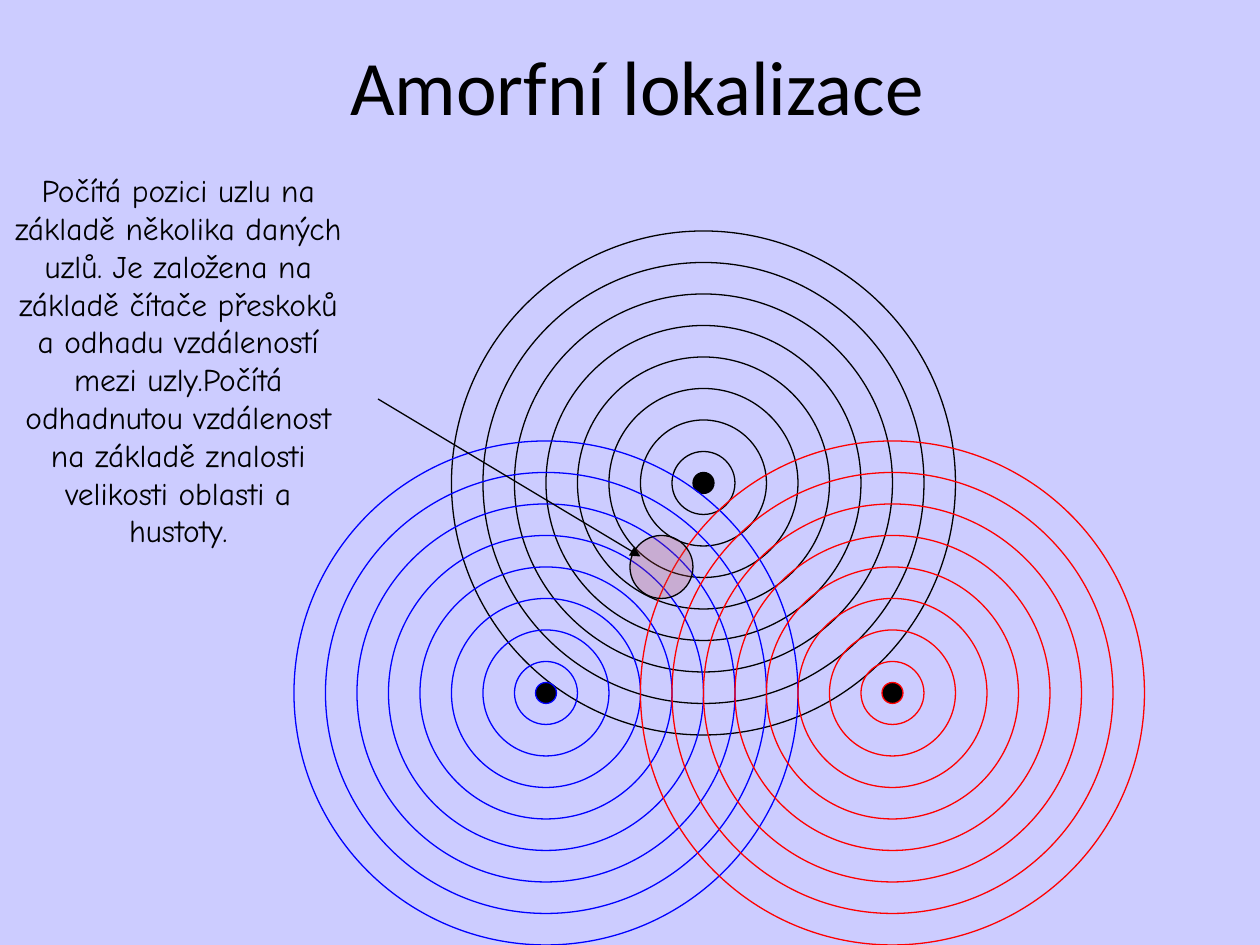
import pptx
import pptx.dml.color
import pptx.enum.shapes
import pptx.enum.text
import pptx.oxml
import pptx.oxml.ns
import pptx.util
from lxml import etree

Pt = pptx.util.Pt

# Content
TITLE = " Amorfní lokalizace"
DESCRIPTION = (
    "Počítá pozici uzlu na základě několika daných uzlů. Je založena na "
    "základě čítače přeskoků a odhadu vzdáleností mezi uzly.Počítá "
    "odhadnutou vzdálenost na základě znalosti velikosti oblasti a hustoty."
)
ANCHOR_NODES = [  # centre x, centre y, theme colour
    (402, 276, "black"),
    (312, 396, "blue"),
    (510, 396, "red"),
]
ESTIMATED_ZONE = (378, 324, 18)  # centre x, centre y, radius
POINTER = (216, 228, 366, 318)  # from x, y, to x, y
TITLE_BOX = (104.4, 22.3, 509.8, 52.6)
DESCRIPTION_BOX = (0, 94.3, 203.8, 375.8)
HOP_COUNT, HOP_RADIUS, NODE_RADIUS = 8, 18, 6

THEME = {
    "background": "CCCCFF",
    "black": "000000",
    "blue": "0000FF",
    "red": "FF0000",
    "zone": "C0504D",
    "zone_opacity": 25,
    "title_font": "Calibri",
    "title_size": 44,
    "body_font": "Comic Neue",
    "body_size": 18,
    "line_width": 0.75,
}


def color(name):
    return pptx.dml.color.RGBColor.from_string(THEME[name])


def style_line(line, name):
    line.color.rgb = color(name)
    line.width = Pt(THEME["line_width"])


def add_circle(slide, x, y, radius, line, fill=None):
    shape = slide.shapes.add_shape(
        pptx.enum.shapes.MSO_SHAPE.OVAL,
        Pt(x - radius), Pt(y - radius), Pt(2 * radius), Pt(2 * radius),
    )
    shape.shadow.inherit = False
    style_line(shape.line, line)
    if fill:
        shape.fill.solid()
        shape.fill.fore_color.rgb = color(fill)
    else:
        shape.fill.background()
    return shape


def write_text(shape, box, text, style, anchor):
    shape.left, shape.top, shape.width, shape.height = map(Pt, box)
    frame = shape.text_frame
    frame.word_wrap = True
    frame.auto_size = pptx.enum.text.MSO_AUTO_SIZE.NONE
    frame.vertical_anchor = anchor
    paragraph = frame.paragraphs[0]
    paragraph.alignment = pptx.enum.text.PP_ALIGN.CENTER
    run = paragraph.add_run()
    run.text = text
    run.font.name = THEME[style + "_font"]
    run.font.size = Pt(THEME[style + "_size"])
    run.font.color.rgb = color("black")


def main():
    presentation = pptx.Presentation()
    presentation.slide_width, presentation.slide_height = Pt(720), Pt(540)
    slide = presentation.slides.add_slide(presentation.slide_layouts[5])
    slide.background.fill.solid()
    slide.background.fill.fore_color.rgb = color("background")
    anchors = pptx.enum.text.MSO_ANCHOR

    # Title
    write_text(slide.shapes.title, TITLE_BOX, TITLE, "title", anchors.MIDDLE)

    # Anchor nodes with their hop rings
    for x, y, name in ANCHOR_NODES:
        add_circle(slide, x, y, NODE_RADIUS, name, fill="black")
        for hop in range(1, HOP_COUNT + 1):
            add_circle(slide, x, y, hop * HOP_RADIUS, name)

    # Translucent zone of the estimated position
    zone = add_circle(slide, *ESTIMATED_ZONE, "black", fill="zone")
    zone_color = zone.fill._xPr.find(".//" + pptx.oxml.ns.qn("a:srgbClr"))
    alpha = etree.SubElement(zone_color, pptx.oxml.ns.qn("a:alpha"))
    alpha.set("val", str(THEME["zone_opacity"] * 1000))

    # Arrow from the description to the zone
    arrow = slide.shapes.add_connector(
        pptx.enum.shapes.MSO_CONNECTOR.STRAIGHT, *map(Pt, POINTER)
    )
    style_line(arrow.line, "black")
    properties = arrow._element.spPr
    head = etree.SubElement(properties.find(pptx.oxml.ns.qn("a:ln")),
                            pptx.oxml.ns.qn("a:tailEnd"))
    head.set("type", "triangle")
    etree.SubElement(properties, pptx.oxml.ns.qn("a:effectLst"))

    # Description
    description = slide.shapes.add_textbox(*map(Pt, DESCRIPTION_BOX))
    write_text(description, DESCRIPTION_BOX, DESCRIPTION, "body", anchors.TOP)

    presentation.save("out.pptx")


if __name__ == "__main__":
    main()
